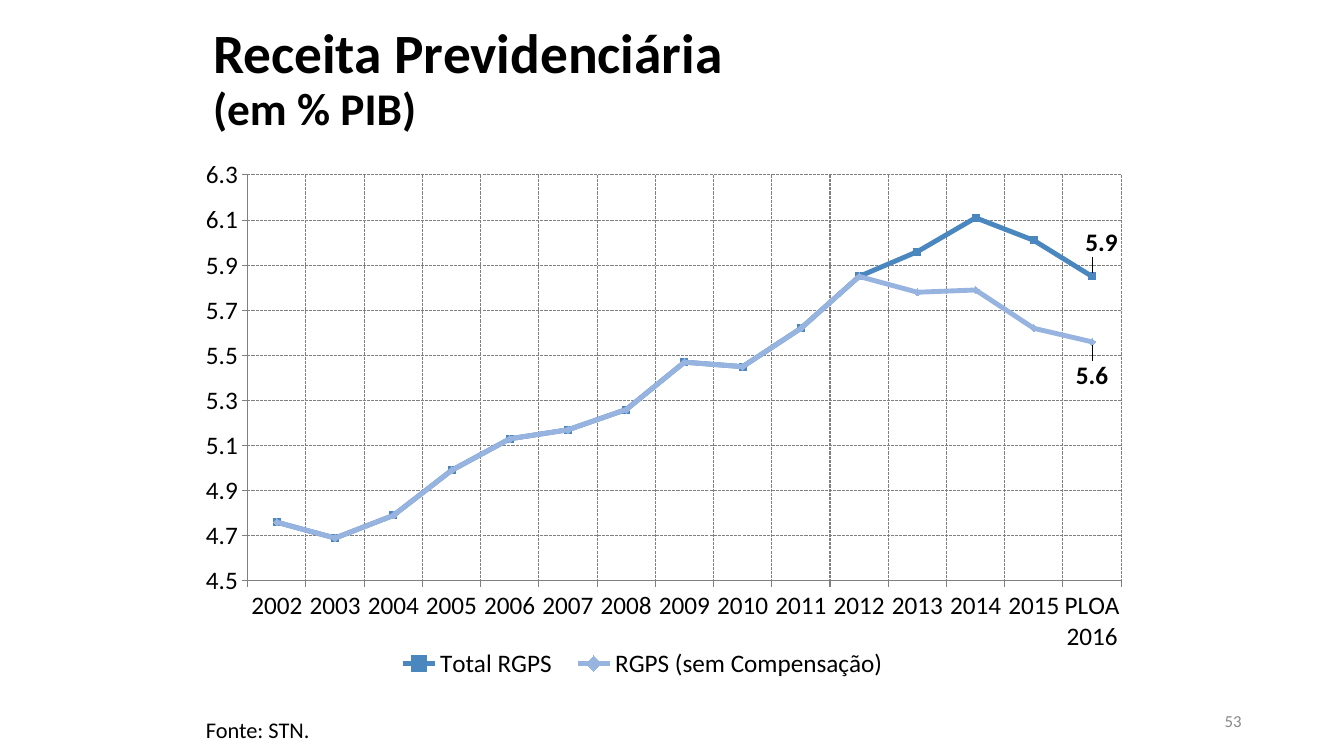
from lxml import etree
from pptx import Presentation
from pptx import util as u
from pptx.chart.data import CategoryChartData
from pptx.dml.color import RGBColor
from pptx.enum import chart as ch, dml, text
from pptx.oxml import parse_xml
from pptx.oxml.ns import nsdecls, qn

FONT = "Calibri"
COLORS = {"text": "000000", "number": "898989", "total": "4A87BE",
          "net": "97B3DF", "forecast": "FF0000", "grid": "808080"}
CHART_BOX = (134, 106, 680, 402)
PLOT_BOX = (43, 19, 624, 290)
LEGEND_BOX = (141, 354, 368, 28)
YEARS = [str(y) for y in range(2002, 2016)] + ["PLOA 2016"]
SHARED = [4.76, 4.69, 4.79, 4.99, 5.13, 5.17, 5.26, 5.47, 5.45, 5.62, 5.85]
SERIES = {"Total RGPS": SHARED + [5.96, 6.11, 6.01, 5.85],
          "RGPS (sem Compensação)": SHARED + [5.78, 5.79, 5.62, 5.56]}
C15 = "http://schemas.example.com/office/drawing/2012/chart"


def rgb(name):
    """Return the named colour."""
    return RGBColor.from_string(COLORS[name])


def style(font, size, color="text", bold=False):
    """Format a font."""
    font.name, font.size, font.bold = FONT, u.Pt(size), bold
    font.color.rgb = rgb(color)


def place(sp, box):
    """Move and size a shape, in points."""
    sp.left, sp.top, sp.width, sp.height = (u.Pt(v) for v in box)


def add_title(s, lines, sizes, box):
    """Fill the title placeholder with one size per line."""
    sp = s.shapes.title
    place(sp, box)
    tf = sp.text_frame
    tf.vertical_anchor = text.MSO_ANCHOR.MIDDLE
    p = tf.paragraphs[0]
    p.text = "\v".join(lines)
    p.alignment, p.line_spacing = text.PP_ALIGN.LEFT, 0.9
    for r, size in zip(p.runs, sizes):
        style(r.font, size, bold=True)


def add_label(s, words, box, size, color="text", align=text.PP_ALIGN.LEFT,
              anchor=text.MSO_ANCHOR.TOP):
    """Add a one-line text box."""
    tf = s.shapes.add_textbox(*(u.Pt(v) for v in box)).text_frame
    tf.word_wrap, tf.vertical_anchor = True, anchor
    p = tf.paragraphs[0]
    p.text, p.alignment = words, align
    style(p.runs[0].font, size, color)


def layout_xml(**values):
    """Build a manual chart layout from its fields."""
    fields = "".join(f'<c:{k} val="{v}"/>' for k, v in values.items())
    return parse_xml(f'<c:layout {nsdecls("c")}><c:manualLayout>{fields}'
                     "</c:manualLayout></c:layout>")


def set_layout(parent, index, box, **target):
    """Place a chart part by its box in points within the chart."""
    for old in parent.findall(qn("c:layout")):
        parent.remove(old)
    x, y, w, h = box
    cw, chh = CHART_BOX[2:]
    parent.insert(index, layout_xml(
        **target, xMode="edge", yMode="edge", x=round(x / cw, 4),
        y=round(y / chh, 4), w=round(w / cw, 4), h=round(h / chh, 4)))


def style_axis(axis):
    """Format an axis and its dashed gridlines."""
    style(axis.tick_labels.font, 18)
    axis.major_tick_mark = ch.XL_TICK_MARK.OUTSIDE
    axis.minor_tick_mark = ch.XL_TICK_MARK.NONE
    axis.has_major_gridlines = True
    grid = axis.major_gridlines.format.line
    for line in (axis.format.line, grid):
        line.color.rgb, line.width = rgb("grid"), u.Pt(0.75)
    grid.dash_style = dml.MSO_LINE.SQUARE_DOT


def style_marker(marker, kind, color):
    """Format a series or point marker."""
    marker.style, marker.size = kind, 5
    marker.format.fill.solid()
    marker.format.fill.fore_color.rgb = rgb(color)
    marker.format.line.color.rgb = rgb(color)


def style_line(line, color):
    """Format a data line."""
    line.color.rgb, line.width = rgb(color), u.Pt(3.5)


def style_series(ser, color, kind, position, dx, dy):
    """Format a series, its forecast points and its last label."""
    ser.smooth = False
    style_line(ser.format.line, color)
    style_marker(ser.marker, kind, color)
    last = len(YEARS) - 1
    for i in (last - 1, last):
        style_line(ser.points[i].format.line, color)
        style_marker(ser.points[i].marker, kind, "forecast")
    label = ser.points[last].data_label
    style(label.font, 18, bold=True)
    label.position = position
    ser.data_labels.show_value = False
    labels = ser.data_labels._element
    labels.find(qn("c:dLbl")).insert(1, layout_xml(x=dx, y=dy))
    ext = etree.SubElement(etree.SubElement(labels, qn("c:extLst")), qn("c:ext"),
                           uri="{CE6537A1-D6FC-4f65-9D91-7224C49458BB}")
    etree.SubElement(ext, f"{{{C15}}}showLeaderLines", nsmap={"c15": C15}, val="1")


def add_revenue_chart(s):
    """Add the revenue line chart."""
    data = CategoryChartData(number_format="#,##0.0")
    data.categories = YEARS
    for name, values in SERIES.items():
        data.add_series(name, values)
    chart = s.shapes.add_chart(ch.XL_CHART_TYPE.LINE_MARKERS,
                               *(u.Pt(v) for v in CHART_BOX), data).chart
    style(chart.font, 18)
    chart.has_title = False
    chart.plots[0].vary_by_categories = False
    style_axis(chart.category_axis)
    axis = chart.value_axis
    style_axis(axis)
    axis.minimum_scale, axis.maximum_scale, axis.major_unit = 4.5, 6.3, 0.2
    axis.tick_labels.number_format = "#,##0.0"
    axis.tick_labels.number_format_is_linked = False
    chart.has_legend = True
    chart.legend.position = ch.XL_LEGEND_POSITION.BOTTOM
    chart.legend.include_in_layout = False
    style(chart.legend.font, 18)
    set_layout(chart.legend._element, 1, LEGEND_BOX)
    set_layout(chart._chartSpace.chart.plotArea, 0, PLOT_BOX, layoutTarget="inner")
    total, net = chart.plots[0].series
    mark, pos = ch.XL_MARKER_STYLE, ch.XL_LABEL_POSITION
    style_series(total, "total", mark.SQUARE, pos.ABOVE, 0.01, -0.02)
    style_series(net, "net", mark.DIAMOND, pos.BELOW, 0, 0.02)


def main():
    """Build the slide and save it."""
    prs = Presentation()
    prs.slide_width, prs.slide_height = u.Pt(960), u.Pt(540)
    s = prs.slides.add_slide(prs.slide_layouts[5])
    add_title(s, ["Receita Previdenciária", "(em % PIB)"], [39.6, 32.4],
              (145, 15, 670, 85))
    add_label(s, "53", (678, 500, 216, 29), 12, "number",
              text.PP_ALIGN.RIGHT, text.MSO_ANCHOR.MIDDLE)
    add_revenue_chart(s)
    add_label(s, "Fonte: STN.", (140, 508, 130, 27), 16)
    prs.save("out.pptx")


if __name__ == "__main__":
    main()
